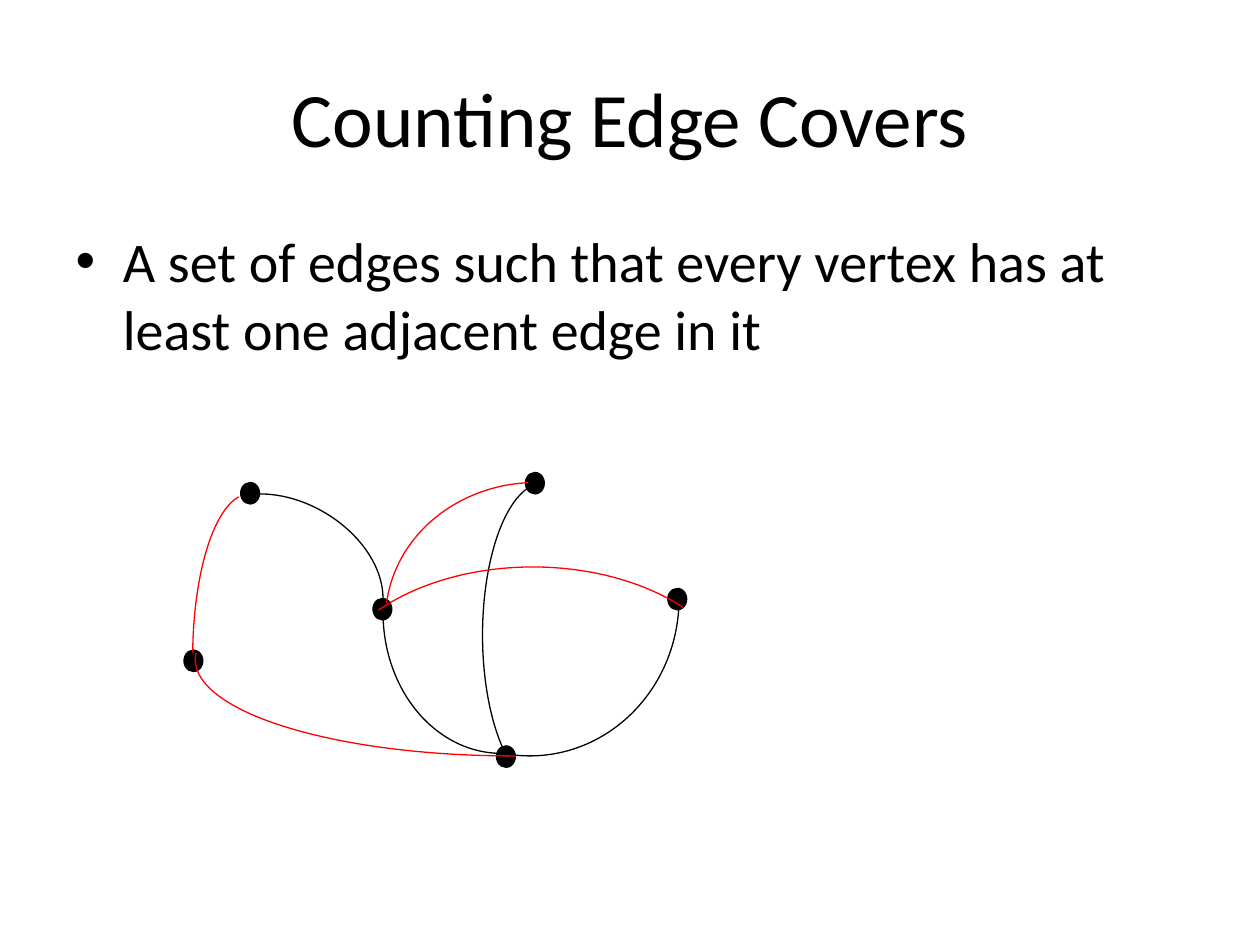
from pptx import Presentation
from pptx.dml.color import RGBColor
from pptx.enum.shapes import MSO_CONNECTOR, MSO_SHAPE
from pptx.enum.text import MSO_ANCHOR, PP_ALIGN
from pptx.oxml.ns import qn
from pptx.util import Inches, Pt
from lxml.etree import SubElement

BLACK = RGBColor(0x00, 0x00, 0x00)
RED = RGBColor(0xFF, 0x00, 0x00)
CELL = Inches(0.1)
LINE_WIDTH = Pt(0.75)
ADJUSTMENT_PER_DEGREE = 0.6

TITLE_BOX = (5, 3, 90, 12.5)
BODY_BOX = (5, 17.5, 90, 49.5)
GRAPH_BOX = (14.6, 35, 51.2, 31.7)

VERTEX_SIZE = (1.5, 1.7)
VERTICES = [(4.5, 3.3), (0, 16.6), (15, 12.5), (24.8, 24.2), (27.1, 2.5), (38.4, 11.7)]
CURVE = ((6, 4.2), (15.8, 12.5))
BACK_EDGE = ((23.7, 3.3, 9.8, 24.2), (108.98, 263.75), BLACK)
GROUPED_EDGES = [
    ((15.6, 0, 23.7, 25), (0.49, 98.19), BLACK),
    ((16, 3.3, 23.9, 21.7), (186.14, 266.77), RED),
    ((15.8, 2.5, 18.8, 22.3), (91.97, 181.8), BLACK),
]
FRONT_EDGES = [
    ((0.7, 4.2, 9, 25.8), (183.92, 266.19), RED),
    ((0.9, 9.7, 50.3, 15.3), (87.96, 181.2), RED),
    ((10.9, 10, 33.6, 21.7), (211.21, 327.42), RED),
]


def grid(*cells):
    """Convert grid cells to slide lengths."""
    return [round(n * CELL) for n in cells]


def within(box, x, y):
    """Shift a point by the corner of its box."""
    return box[0] + x, box[1] + y


def fill_placeholder(sp, box, text, size, frame_format, paragraph_format):
    """Place a placeholder and set its text and format."""
    sp.left, sp.top, sp.width, sp.height = grid(*box)
    tf = sp.text_frame
    tf.text = text
    p = tf.paragraphs[0]
    for target, values in (
        (tf, frame_format),
        (p, paragraph_format),
        (p.runs[0].font, {"name": "Calibri", "size": Pt(size)}),
    ):
        for name, value in values.items():
            setattr(target, name, value)
    p.runs[0].font.color.rgb = BLACK


def set_line(sp, color):
    """Give a shape a thin line."""
    sp.line.color.rgb = color
    sp.line.width = LINE_WIDTH


def add_arc(shapes, box, edge):
    """Draw one edge as an arc between two angles."""
    (x, y, width, height), angles, color = edge
    sp = shapes.add_shape(MSO_SHAPE.ARC, *grid(*within(box, x, y), width, height))
    sp.shadow.inherit = False
    sp.fill.background()
    for i, angle in enumerate(angles):
        sp.adjustments[i] = angle * ADJUSTMENT_PER_DEGREE
    set_line(sp, color)


def add_vertex(shapes, box, corner):
    """Draw one vertex as a black dot."""
    sp = shapes.add_shape(MSO_SHAPE.OVAL, *grid(*within(box, *corner), *VERTEX_SIZE))
    sp.shadow.inherit = False
    sp.fill.solid()
    sp.fill.fore_color.rgb = BLACK
    set_line(sp, BLACK)


def add_curve(shapes, box, start, end):
    """Draw one edge as a quarter-turn connector."""
    ends = grid(*within(box, *start), *within(box, *end))
    sp = shapes.add_connector(MSO_CONNECTOR.CURVE, *ends)
    properties = sp._element.spPr
    properties.find(qn("a:prstGeom")).set("prst", "curvedConnector2")
    set_line(sp, BLACK)
    SubElement(properties, qn("a:effectLst"))


def add_graph(s, box):
    """Draw the graph with its edge cover in red."""
    add_arc(s.shapes, box, BACK_EDGE)
    group = s.shapes.add_group_shape().shapes
    for corner in VERTICES:
        add_vertex(group, box, corner)
    add_curve(group, box, *CURVE)
    for shapes, edges in ((group, GROUPED_EDGES), (s.shapes, FRONT_EDGES)):
        for edge in edges:
            add_arc(shapes, box, edge)


def main():
    """Build and save the slide."""
    prs = Presentation()
    prs.slide_width, prs.slide_height = grid(100, 75)
    s = prs.slides.add_slide(prs.slide_layouts[1])
    fill_placeholder(s.shapes.title, TITLE_BOX, "Counting Edge Covers", 44,
                     {"vertical_anchor": MSO_ANCHOR.MIDDLE},
                     {"alignment": PP_ALIGN.CENTER})
    fill_placeholder(s.placeholders[1], BODY_BOX,
                     "A set of edges such that every vertex has at least one adjacent edge in it",
                     32, {"vertical_anchor": MSO_ANCHOR.TOP}, {"alignment": PP_ALIGN.LEFT})
    add_graph(s, GRAPH_BOX)
    prs.save("out.pptx")


if __name__ == "__main__":
    main()
